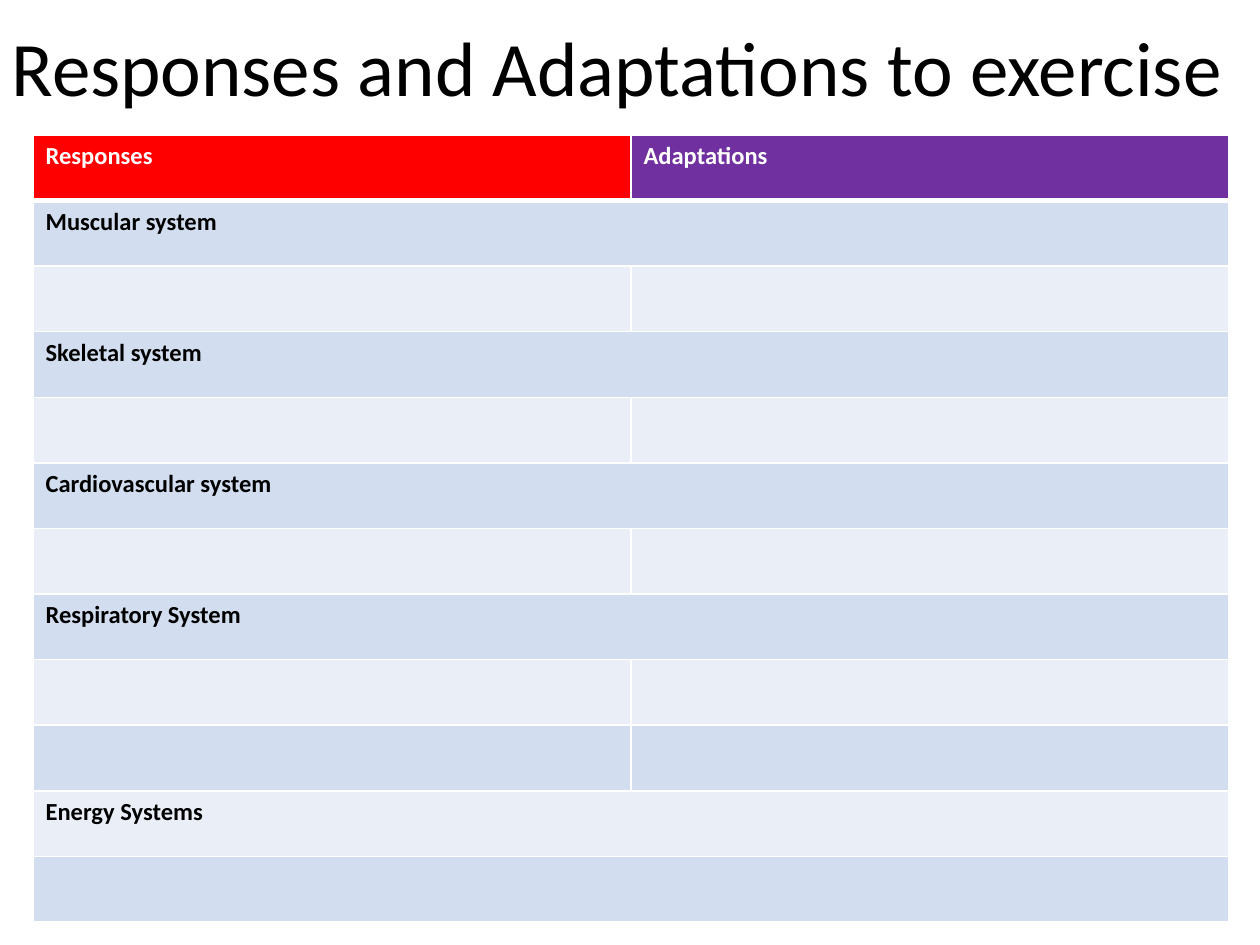
import pptx
import pptx.dml.color
import pptx.enum.text
import pptx.oxml
import pptx.oxml.ns
import pptx.util

SCALE = 914400 / 126


def px(length):
    return pptx.util.Emu(round(length * SCALE))


def color(value):
    return pptx.dml.color.RGBColor.from_string(value)


presentation = pptx.Presentation()
presentation.slide_width = px(1260)
presentation.slide_height = px(945)
slide = presentation.slides.add_slide(presentation.slide_layouts[5])

heading = slide.shapes.title
heading.left, heading.top, heading.width, heading.height = px(-8), px(13), px(1268), px(106)
heading.text_frame.text = "Responses and Adaptations to exercise "
heading.text_frame.word_wrap = False
heading.text_frame.auto_size = pptx.enum.text.MSO_AUTO_SIZE.SHAPE_TO_FIT_TEXT
heading_line = heading.text_frame.paragraphs[0]
heading_line.alignment = pptx.enum.text.PP_ALIGN.CENTER
heading_line.runs[0].font.size = pptx.util.Pt(44)
heading_line.runs[0].font.name = "Calibri"
heading_line.runs[0].font.color.rgb = color("000000")

DARK_BAND, LIGHT_BAND = "D2DEEF", "EAEFF7"
body_rows = [
    ("Muscular system", True),
    ("", False),
    ("Skeletal system", True),
    ("", False),
    ("Cardiovascular system", True),
    ("", False),
    ("Respiratory System", True),
    ("", False),
    ("", False),
    ("Energy Systems", True),
    ("", True),
]

systems = slide.shapes.add_table(
    len(body_rows) + 1, 2, px(33), px(135), px(1196), px(787)
).table

for row_index, row in enumerate(systems.rows):
    for column_index, cell in enumerate(row.cells):
        if row_index == 0:
            label = ("Responses", "Adaptations")[column_index]
            fill, text_color = ("FF0000", "7030A0")[column_index], "FFFFFF"
        else:
            label = body_rows[row_index - 1][0] if column_index == 0 else ""
            fill = DARK_BAND if row_index % 2 else LIGHT_BAND
            text_color = "000000"

        for side in "LRTB":
            under_header = (row_index, side) in [(0, "B"), (1, "T")]
            width = pptx.util.Pt(3 if under_header else 1)
            cell._tc.get_or_add_tcPr().append(pptx.oxml.parse_xml(
                f'<a:ln{side} {pptx.oxml.ns.nsdecls("a")} w="{width}">'
                '<a:solidFill><a:srgbClr val="FFFFFF"/></a:solidFill>'
                f'</a:ln{side}>'
            ))
        cell.fill.solid()
        cell.fill.fore_color.rgb = color(fill)

        if label:
            cell.text_frame.text = label
            font = cell.text_frame.paragraphs[0].runs[0].font
            font.name = "Calibri"
            font.size = pptx.util.Pt(14)
            font.bold = True
            font.color.rgb = color(text_color)

for row_index, (label, spans_columns) in enumerate(body_rows, start=1):
    if spans_columns:
        systems.cell(row_index, 0).merge(systems.cell(row_index, 1))

presentation.save("out.pptx")
